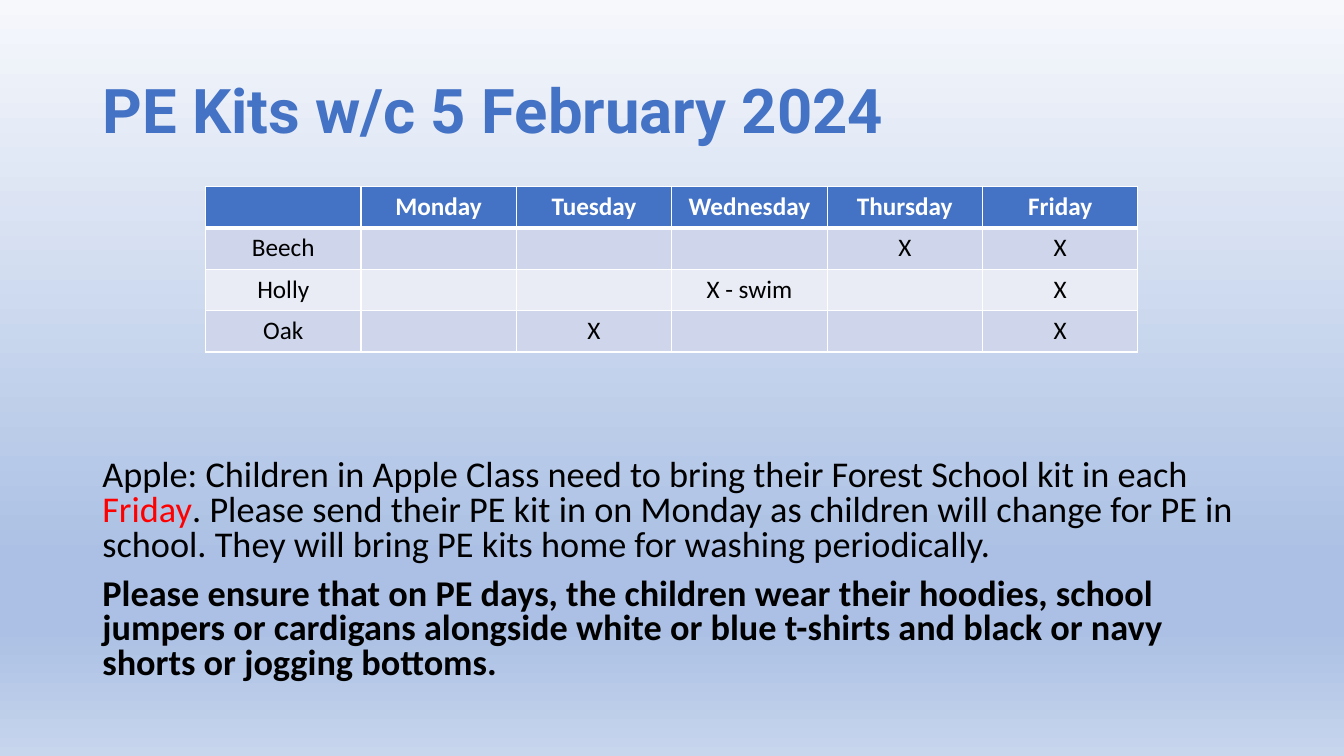
from dataclasses import dataclass

import lxml.etree
import pptx
import pptx.dml.color
import pptx.enum.text
import pptx.oxml
import pptx.oxml.ns
import pptx.util

Cm = pptx.util.Cm
Pt = pptx.util.Pt
RGBColor = pptx.dml.color.RGBColor
MSO_ANCHOR = pptx.enum.text.MSO_ANCHOR
qn = pptx.oxml.ns.qn

BLUE = RGBColor(0x44, 0x72, 0xC4)
WHITE = RGBColor(0xFF, 0xFF, 0xFF)
BLACK = RGBColor(0, 0, 0)
RED = RGBColor(0xFF, 0, 0)
BAND_DARK = RGBColor(0xCF, 0xD5, 0xEA)
BAND_LIGHT = RGBColor(0xE9, 0xEB, 0xF5)
SKY_TOP = RGBColor(0xF6, 0xF8, 0xFC)
SKY_DEEP = RGBColor(0xAB, 0xC0, 0xE4)
SKY_BOTTOM = RGBColor(0xC7, 0xD5, 0xED)
SKY = ((0, SKY_TOP), (74, SKY_DEEP), (83, SKY_DEEP), (100, SKY_BOTTOM))

TIMETABLE = (
    ("", "Monday", "Tuesday", "Wednesday", "Thursday", "Friday"),
    ("Beech", "", "", "", "X", "X"),
    ("Holly", "", "", "X - swim", "", "X"),
    ("Oak", "", "X", "", "", "X"),
)


@dataclass(frozen=True)
class Span:
    text: str
    size: float
    color: RGBColor = BLACK
    bold: bool = False
    font: str = "Calibri"


@dataclass(frozen=True)
class TextBlock:
    top: float
    height: float
    anchor: MSO_ANCHOR
    line_spacing: float
    paragraphs: tuple[tuple[Span, ...], ...]


BLOCKS = (
    TextBlock(1.01, 3.68, MSO_ANCHOR.MIDDLE, 0.9, (
        (Span("PE Kits w/c 5 February 2024", 44, BLUE, True, "Roboto"),),
    )),
    TextBlock(11.46, 5.71, MSO_ANCHOR.TOP, 0.8, (
        (
            Span("Apple: Children in Apple Class need to bring their Forest "
                 "School kit in each ", 25.9),
            Span("Friday", 25.9, RED),
            Span(". Please send their PE kit in on Monday as children will "
                 "change for PE in school. They will bring PE kits home for "
                 "washing periodically.", 25.9),
        ),
        (
            Span("Please ensure that on PE days, the children wear their "
                 "hoodies, school jumpers or cardigans alongside white or blue "
                 "t-shirts and black or navy shorts or jogging bottoms.",
                 25.9, bold=True),
        ),
    )),
)


def set_background(slide) -> None:
    fill = slide.background.fill
    fill.gradient()
    fill.gradient_angle = 270
    stops = slide.background._cSld.find(".//" + qn("a:gsLst"))
    for gs in list(stops):
        stops.remove(gs)
    for percent, color in SKY:
        gs = lxml.etree.SubElement(stops, qn("a:gs"), pos=str(percent * 1000))
        lxml.etree.SubElement(gs, qn("a:srgbClr"), val=str(color))


def format_run(r, span: Span) -> None:
    r.font.name = span.font
    r.font.size = Pt(span.size)
    r.font.bold = span.bold
    r.font.color.rgb = span.color


def add_block(slide, block: TextBlock) -> None:
    sp = slide.shapes.add_textbox(Cm(2.33), Cm(block.top), Cm(29.21), Cm(block.height))
    tf = sp.text_frame
    tf.word_wrap = True
    tf.vertical_anchor = block.anchor
    for i, spans in enumerate(block.paragraphs):
        p = tf.add_paragraph() if i else tf.paragraphs[0]
        p.line_spacing = block.line_spacing
        p.space_before = Pt(10 if i else 0)
        for span in spans:
            r = p.add_run()
            r.text = span.text
            format_run(r, span)


def set_borders(cell, widths: dict[str, float]) -> None:
    """Draw white borders; widths maps sides L, R, T, B, in that order, to points."""
    tc_pr = cell._tc.get_or_add_tcPr()
    for i, (side, width) in enumerate(widths.items()):
        ln = lxml.etree.Element(qn(f"a:ln{side}"), w=str(Pt(width)))
        fill = lxml.etree.SubElement(ln, qn("a:solidFill"))
        lxml.etree.SubElement(fill, qn("a:srgbClr"), val=str(WHITE))
        tc_pr.insert(i, ln)


def add_timetable(slide) -> None:
    rows, cols = len(TIMETABLE), len(TIMETABLE[0])
    table = slide.shapes.add_table(
        rows, cols, Cm(5.18), Cm(4.7), Cm(23.5), Cm(4.17)).table
    for row, texts in enumerate(TIMETABLE):
        header = row == 0
        band = BLUE if header else BAND_DARK if row % 2 else BAND_LIGHT
        for col, text in enumerate(texts):
            cell = table.cell(row, col)
            cell.fill.solid()
            cell.fill.fore_color.rgb = band
            set_borders(cell, {"L": 1, "R": 1, "T": 3 if row == 1 else 1,
                               "B": 3 if header else 1})
            p = cell.text_frame.paragraphs[0]
            p.alignment = pptx.enum.text.PP_ALIGN.CENTER
            p.text = text
            for r in p.runs:
                format_run(r, Span(text, 18, WHITE if header else BLACK, header))


def main() -> None:
    prs = pptx.Presentation()
    prs.slide_width, prs.slide_height = Cm(33.87), Cm(19.05)
    slide = prs.slides.add_slide(prs.slide_layouts[6])
    set_background(slide)
    for block in BLOCKS:
        add_block(slide, block)
    add_timetable(slide)
    prs.save("out.pptx")


if __name__ == "__main__":
    main()
